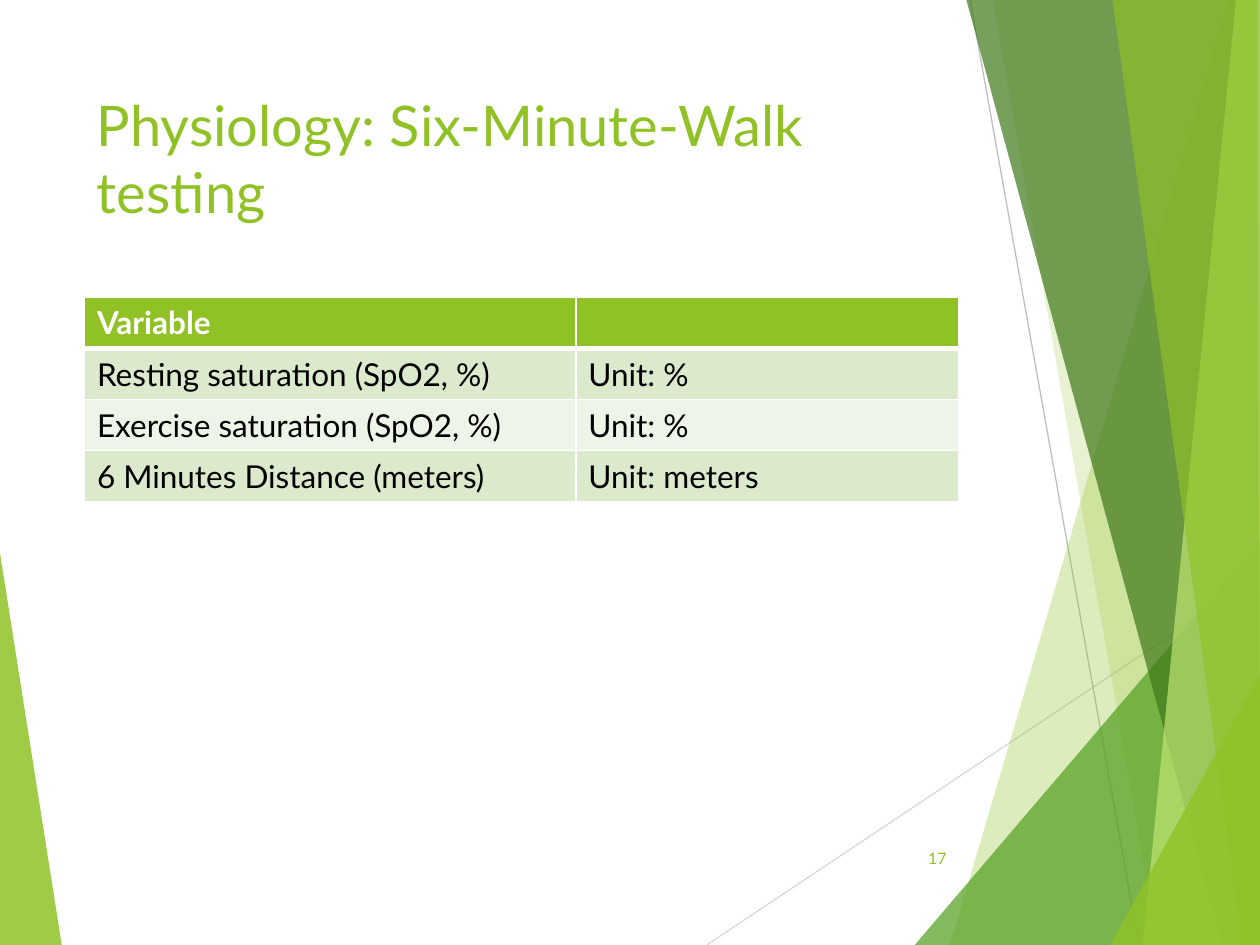
from dataclasses import dataclass

from lxml import etree
from pptx import Presentation
from pptx.dml.color import RGBColor
from pptx.enum.shapes import MSO_CONNECTOR
from pptx.enum.text import MSO_ANCHOR, PP_ALIGN
from pptx.oxml.ns import qn
from pptx.util import Inches, Pt

STRAIGHT = MSO_CONNECTOR.STRAIGHT
TOP, MIDDLE = MSO_ANCHOR.TOP, MSO_ANCHOR.MIDDLE
LEFT, RIGHT = PP_ALIGN.LEFT, PP_ALIGN.RIGHT

FONT = "Lato"
GREEN, WHITE, BLACK = "90C226", "FFFFFF", "000000"
BANDS = ("DBE9CD", "EEF4E8")


@dataclass
class Facet:
    color: str
    opacity: int
    points: list[tuple[float, float]]


@dataclass
class Line:
    color: str
    start: tuple[float, float]
    end: tuple[float, float]


LEFT_FACET = Facet(GREEN, 85, [(0, 4.39), (0.49, 7.5), (0, 7.5)])
LINES = [
    Line("D9D9D9", (5.61, 7.5), (10, 4.57)),
    Line("BFBFBF", (7.7, 0), (9.04, 7.5)),
]
RIGHT_FACETS = [
    Facet(GREEN, 30, [(9.75, 0), (7.54, 7.5), (10, 7.5), (10, 0)]),
    Facet(GREEN, 20, [(7.88, 0), (9.19, 7.5), (10, 7.5), (10, 0)]),
    Facet("54A021", 72, [(7.26, 7.5), (10, 4.29), (10, 7.5)]),
    Facet("3F7819", 70, [(7.67, 0), (9.7, 7.5), (10, 7.5), (10, 0)]),
    Facet("C0E474", 70, [(9.81, 0), (9.07, 7.5), (10, 7.5), (10, 0)]),
    Facet(GREEN, 65, [(8.83, 0), (9.86, 7.5), (10, 7.5), (9.98, 0)]),
    Facet(GREEN, 80, [(8.81, 7.5), (10, 5.35), (10, 7.5)]),
]
ROWS = [
    ("Variable", ""),
    ("Resting saturation (SpO2, %)", "Unit: %"),
    ("Exercise saturation (SpO2, %)", "Unit: %"),
    ("6 Minutes Distance (meters)", "Unit: meters"),
]
COL_WIDTHS = (3.9, 3.04)


def rgb(color: str) -> RGBColor:
    return RGBColor.from_string(color)


def style(p, size: float, color: str, bold: bool = False) -> None:
    p.font.name = FONT
    p.font.size = Pt(size)
    p.font.bold = bold
    p.font.color.rgb = rgb(color)


def add_facet(s, facet: Facet) -> None:
    points = [(Inches(x), Inches(y)) for x, y in facet.points]
    builder = s.shapes.build_freeform(*points[0])
    builder.add_line_segments(points[1:], close=True)
    sp = builder.convert_to_shape()
    sp.shadow.inherit = False
    sp.line.fill.background()
    sp.fill.solid()
    sp.fill.fore_color.rgb = rgb(facet.color)
    color = sp._element.spPr.find(".//" + qn("a:srgbClr"))
    etree.SubElement(color, qn("a:alpha"), val=str(facet.opacity * 1000))


def add_line(s, line: Line) -> None:
    ends = [Inches(v) for v in line.start + line.end]
    sp = s.shapes.add_connector(STRAIGHT, *ends)
    sp.line.color.rgb = rgb(line.color)
    sp.line.width = Pt(0.75)
    etree.SubElement(sp._element.spPr, qn("a:effectLst"))


def add_text(s, box: tuple[float, ...], text: str, size: float,
             anchor, align) -> None:
    tf = s.shapes.add_textbox(*(Inches(v) for v in box)).text_frame
    tf.word_wrap = True
    tf.vertical_anchor = anchor
    p = tf.paragraphs[0]
    p.text = text
    p.alignment = align
    style(p, size, GREEN)


def add_borders(cell, top: float, bottom: float) -> None:
    tc_pr = cell._tc.get_or_add_tcPr()
    for side, width in zip("LRTB", (1, 1, top, bottom)):
        ln = etree.SubElement(tc_pr, qn(f"a:ln{side}"), w=str(Pt(width)))
        fill = etree.SubElement(ln, qn("a:solidFill"))
        etree.SubElement(fill, qn("a:srgbClr"), val=WHITE)


def add_table(s) -> None:
    table = s.shapes.add_table(
        len(ROWS), len(COL_WIDTHS), Inches(0.67), Inches(2.36),
        Inches(sum(COL_WIDTHS)), Inches(1.62)).table
    for col, width in zip(table.columns, COL_WIDTHS):
        col.width = Inches(width)
    for i, row in enumerate(ROWS):
        header = i == 0
        for j, text in enumerate(row):
            cell = table.cell(i, j)
            add_borders(cell, 3 if i == 1 else 1, 3 if header else 1)
            cell.fill.solid()
            cell.fill.fore_color.rgb = rgb(GREEN if header else BANDS[(i - 1) % 2])
            cell.vertical_anchor = TOP if header else MIDDLE
            p = cell.text_frame.paragraphs[0]
            p.text = text
            style(p, 18, WHITE if header else BLACK, header)


def main() -> None:
    prs = Presentation()
    prs.slide_width, prs.slide_height = Inches(10), Inches(7.5)
    s = prs.slides.add_slide(prs.slide_layouts[6])
    add_facet(s, LEFT_FACET)
    for line in LINES:
        add_line(s, line)
    for facet in RIGHT_FACETS:
        add_facet(s, facet)
    add_text(s, (0.67, 0.67, 6.94, 1.44),
             "Physiology: Six-Minute-Walk testing", 32, TOP, LEFT)
    add_table(s)
    add_text(s, (7.05, 6.61, 0.56, 0.4), "17", 9, MIDDLE, RIGHT)
    prs.save("out.pptx")


if __name__ == "__main__":
    main()
